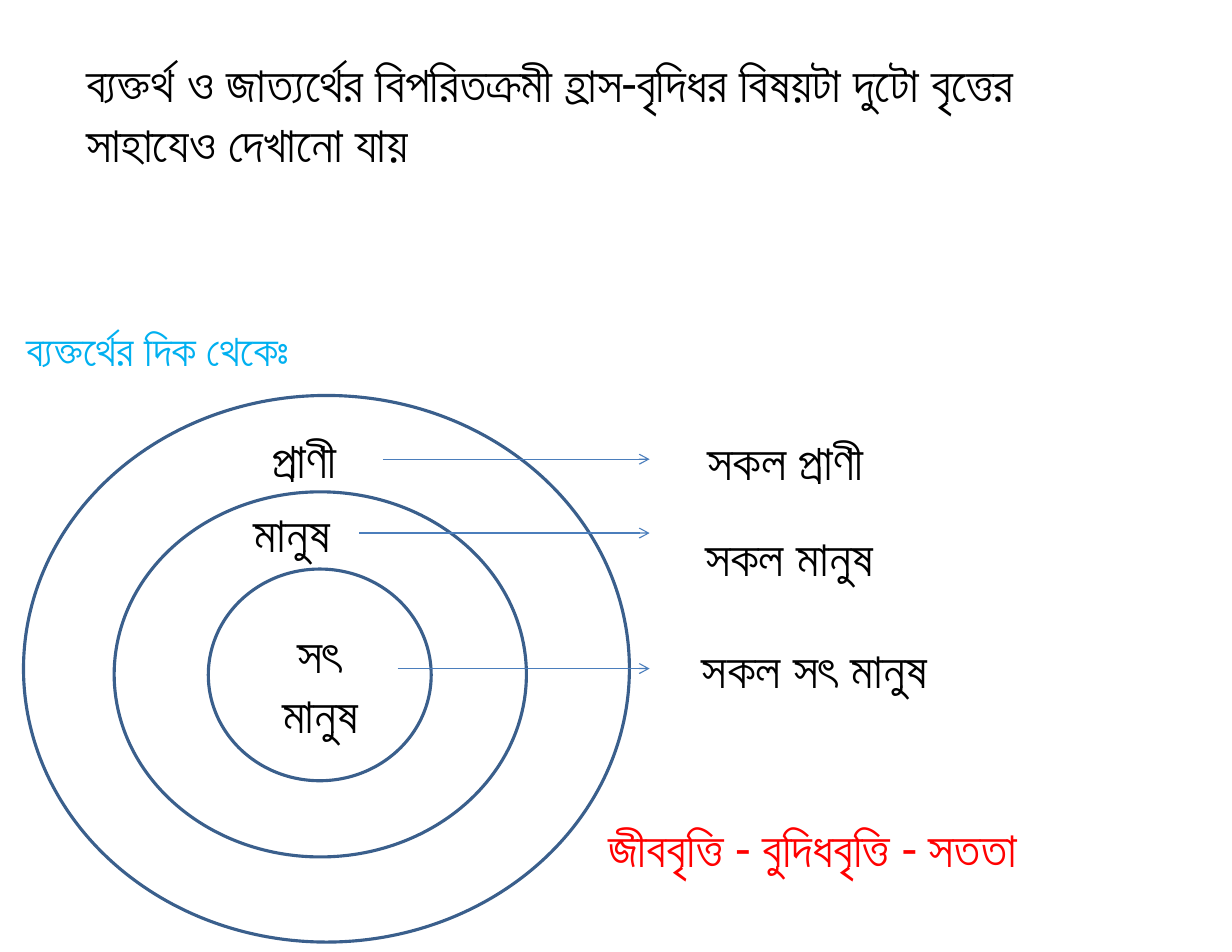
from lxml import etree
from pptx import Presentation
from pptx import util as u
from pptx.enum import shapes, text
from pptx.oxml import ns

Pt = u.Pt
INK = {"black": "000000", "blue": "00B0F0", "red": "FF0000",
       "white": "FFFFFF", "ring": "3A5F8C", "arrow": "4B7EBC"}


def tint(color, name):
    color.rgb = type(color.rgb or RGB).from_string(INK[name])


def paint(fill, name):
    fill.solid()
    fill.fore_color.rgb = RGB.from_string(INK[name])


def write(frame, words, size=32, ink="black", font="Roboto",
          align=text.PP_ALIGN.LEFT):
    frame.word_wrap = True
    frame.auto_size = text.MSO_AUTO_SIZE.NONE
    frame.vertical_anchor = text.MSO_ANCHOR.TOP
    frame.text = words
    para = frame.paragraphs[0]
    para.alignment = align
    para.font.size = Pt(size)
    para.font.name = font
    para.font.color.rgb = RGB.from_string(INK[ink])


def label(slide, box, words, **style):
    shape = slide.shapes.add_textbox(*map(Pt, box))
    write(shape.text_frame, words, **style)


def title(slide, box, words):
    head = slide.shapes.title
    head.left, head.top, head.width, head.height = map(Pt, box)
    write(head.text_frame, words)


def rings(slide, box):
    left, top, wide, high = box
    sizes = [(0, 0, wide, high), (58.3, 62, 265, 234.7),
             (118.8, 111.6, 143.3, 136.1)]
    for x, y, w, h in sizes:
        ring = slide.shapes.add_shape(
            shapes.MSO_SHAPE.OVAL, Pt(left + x), Pt(top + y), Pt(w), Pt(h))
        ring.shadow.inherit = False
        paint(ring.fill, "white")
        paint(ring.line.fill, "ring")
        ring.line.width = Pt(2)
    label(slide, (left + 152.7, top + 18, 76.3, 46), "প্রাণী")
    label(slide, (left + 141.1, top + 65.5, 99.4, 46), "মানুষ")
    label(slide, (left + 141.1, top + 143.2, 99.4, 85), "সৎ মানুষ",
          font="Calibri", align=text.PP_ALIGN.CENTER)


def arrow(slide, start, end, y):
    line = slide.shapes.add_connector(
        shapes.MSO_CONNECTOR.STRAIGHT, Pt(start), Pt(y), Pt(end), Pt(y))
    paint(line.line.fill, "arrow")
    line.line.width = Pt(0.75)
    tail = etree.SubElement(line.line._get_or_add_ln(), ns.qn("a:tailEnd"))
    tail.set("type", "arrow")
    etree.SubElement(line._element.spPr, ns.qn("a:effectLst"))


def notes(slide, box):
    left, top, wide, high = box
    rows = [(15.1, 21.6, 216.7, 0, "সকল প্রাণী"),
            (0, 69.1, 215.3, 61.2, "সকল মানুষ"),
            (24.5, 156.2, 213.1, 133.2, "সকল সৎ মানুষ")]
    for start, y, x, drop, words in rows:
        arrow(slide, left + start, left + 186.5, top + y)
        label(slide, (left + x, top + drop, wide - x, 46), words)


def main():
    deck = Presentation()
    deck.slide_width, deck.slide_height = Pt(792), Pt(612)
    slide = deck.slides.add_slide(deck.slide_layouts[5])
    title(slide, (48.2, 30.2, 666, 85),
          "ব্যক্তর্থ ও জাত্যর্থের বিপরিতক্রমী হ্রাস-বৃদিধর বিষয়টা "
          "দুটো বৃত্তের সাহাযেও দেখানো যায়")
    label(slide, (10, 203.8, 267.8, 41), "ব্যক্তর্থের দিক থেকেঃ",
          size=28, ink="blue")
    rings(slide, (15.1, 254.2, 389.5, 351.4))
    notes(slide, (231.1, 273.6, 513.3, 179.2))
    label(slide, (383.8, 522, 408.2, 46),
          "জীববৃত্তি - বুদিধবৃত্তি - সততা", ink="red")
    deck.save("out.pptx")


from pptx.dml.color import RGBColor as RGB

if __name__ == "__main__":
    main()
